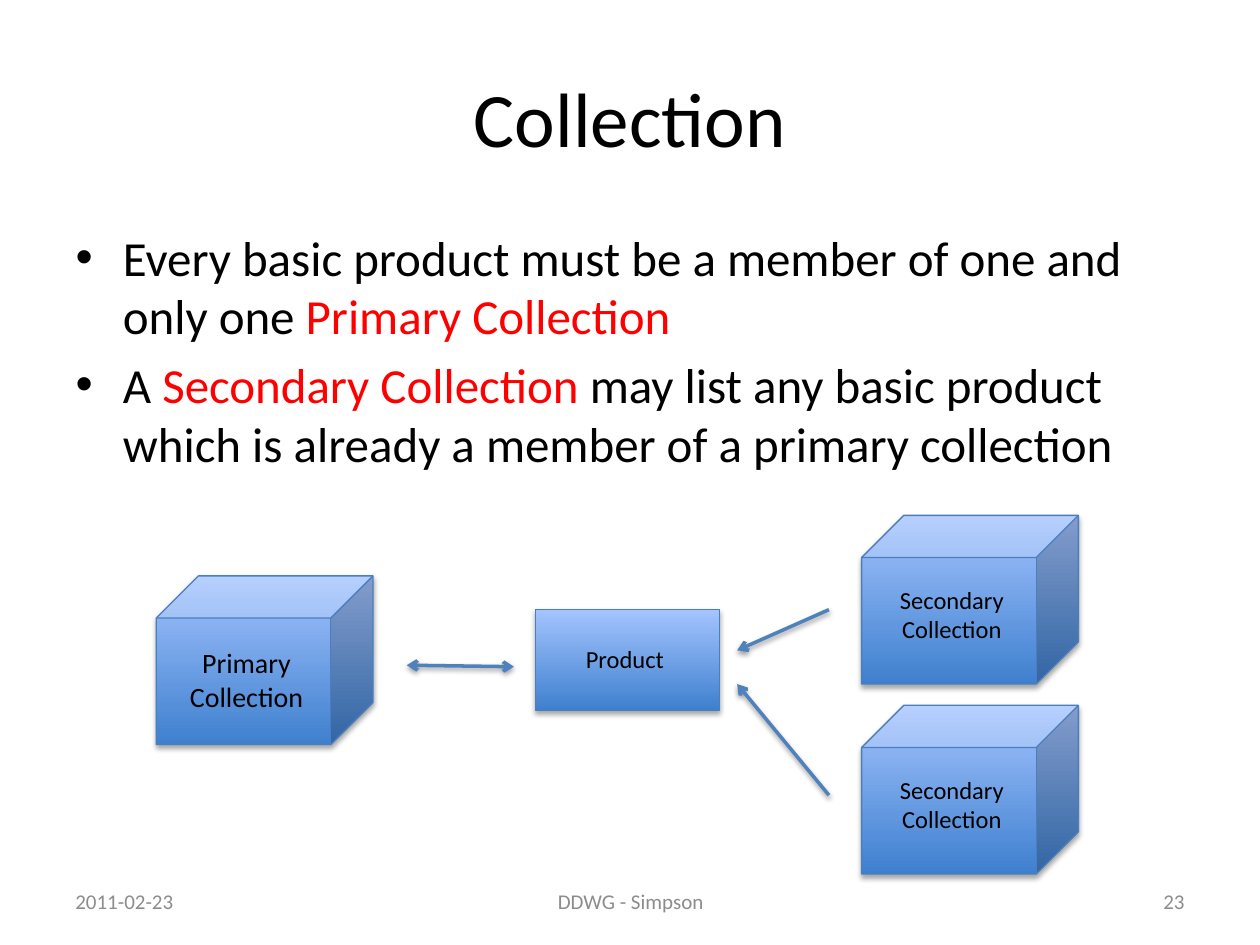
"""Build the Collection slide: two rules above a diagram of a product and its collections."""
from dataclasses import dataclass

from lxml.etree import SubElement
from pptx import Presentation
from pptx.dml.color import RGBColor
from pptx.enum.shapes import MSO_CONNECTOR, MSO_SHAPE
from pptx.enum.text import MSO_ANCHOR, PP_ALIGN
from pptx.oxml.ns import qn
from pptx.util import Cm, Pt


@dataclass(frozen=True)
class Theme:
    font: str = "Calibri"
    ink: str = "000000"
    accent: str = "FF0000"
    muted: str = "8C8C8C"
    gradient: tuple = ("3F80CE", "A4C4FF")
    outline: str = "4B7EBC"
    arrow: str = "4F81BD"
    title_size: int = 44
    body_size: int = 28
    primary_size: int = 16
    label_size: int = 14
    footer_size: int = 12


THEME = Theme()

TITLE = "Collection"
TITLE_BOX = (1.27, 0.76, 22.86, 3.18)
RULES = [
    [("Every basic product must be a member of one and only one ", THEME.ink),
     ("Primary Collection", THEME.accent)],
    [("A ", THEME.ink),
     ("Secondary Collection ", THEME.accent),
     ("may list any basic product which is already a member of a primary collection", THEME.ink)],
]
RULES_BOX = (1.27, 4.45, 22.86, 5.94)

FOOTER_TOP, FOOTER_HEIGHT = 17.65, 1.02
FOOTER = [
    ("2011-02-23", 1.27, 5.92, PP_ALIGN.LEFT),
    ("DDWG - Simpson", 8.69, 8.05, PP_ALIGN.CENTER),
    ("23", 18.21, 5.92, PP_ALIGN.RIGHT),
]

PRODUCT = "Product"
PRODUCT_BOX = (10.8, 12.29, 3.71, 2.03)
PRODUCT_LABEL_BOX = (11.56, 12.85, 2.08, 0.86)

CUBE_SIZE = (4.37, 3.4)
CUBE_LABEL = (0.41, 1.28, 2.82, 1.5)
COLLECTIONS = [
    ("Primary Collection", 3.15, 11.61, THEME.primary_size),
    ("Secondary Collection", 17.37, 10.39, THEME.label_size),
    ("Secondary Collection", 17.37, 14.22, THEME.label_size),
]

ARROWS = [
    ((8.2, 13.41), (10.36, 13.44), ("headEnd", "tailEnd")),
    ((16.71, 12.29), (14.86, 13.11), ("tailEnd",)),
    ((16.71, 16.03), (14.86, 13.79), ("tailEnd",)),
]


def lengths(values):
    return [Cm(value) for value in values]


def write_text(frame, paragraphs, *, size, align=None, anchor=None, wrap=True):
    frame.word_wrap = wrap
    if anchor is not None:
        frame.vertical_anchor = anchor
    for index, runs in enumerate(paragraphs):
        paragraph = frame.paragraphs[0] if index == 0 else frame.add_paragraph()
        paragraph.alignment = align
        for words, color in runs:
            run = paragraph.add_run()
            run.text = words
            run.font.name = THEME.font
            run.font.size = Pt(size)
            run.font.color.rgb = RGBColor.from_string(color)


def place(placeholder, box):
    placeholder.left, placeholder.top, placeholder.width, placeholder.height = lengths(box)
    return placeholder.text_frame


def add_label(slide, words, box, color=THEME.ink, **text_format):
    label = slide.shapes.add_textbox(*lengths(box))
    write_text(label.text_frame, [[(words, color)]], **text_format)


def cast_shadow(item, opacity, distance):
    effects = SubElement(item._element.spPr, qn("a:effectLst"))
    shadow = SubElement(effects, qn("a:outerShdw"), blurRad=str(Pt(3.1)),
                        dist=str(Pt(distance)), dir="5400000", rotWithShape="0")
    color = SubElement(shadow, qn("a:srgbClr"), val="000000")
    SubElement(color, qn("a:alpha"), val=str(opacity * 1000))


def add_solid(slide, kind, box):
    solid = slide.shapes.add_shape(kind, *lengths(box))
    solid.fill.gradient()
    solid.fill.gradient_angle = 90
    for stop, position, color in zip(solid.fill.gradient_stops, (0, 1), THEME.gradient):
        stop.position = position
        stop.color.rgb = RGBColor.from_string(color)
    solid.line.color.rgb = RGBColor.from_string(THEME.outline)
    solid.line.width = Pt(0.75)
    cast_shadow(solid, 35, 1.8)


def add_arrow(slide, start, end, tips):
    arrow = slide.shapes.add_connector(MSO_CONNECTOR.STRAIGHT, *lengths(start + end))
    arrow.line.color.rgb = RGBColor.from_string(THEME.arrow)
    arrow.line.width = Pt(2)
    for tip in tips:
        SubElement(arrow.line._get_or_add_ln(), qn(f"a:{tip}"), type="arrow")
    cast_shadow(arrow, 38, 1.6)


def main():
    deck = Presentation()
    deck.slide_width, deck.slide_height = lengths((25.4, 19.05))
    slide = deck.slides.add_slide(deck.slide_layouts[1])

    write_text(place(slide.shapes.title, TITLE_BOX), [[(TITLE, THEME.ink)]],
               size=THEME.title_size, align=PP_ALIGN.CENTER, anchor=MSO_ANCHOR.MIDDLE)
    write_text(place(slide.placeholders[1], RULES_BOX), RULES, size=THEME.body_size)

    for words, left, width, align in FOOTER:
        add_label(slide, words, (left, FOOTER_TOP, width, FOOTER_HEIGHT), THEME.muted,
                  size=THEME.footer_size, align=align, anchor=MSO_ANCHOR.MIDDLE)

    add_solid(slide, MSO_SHAPE.RECTANGLE, PRODUCT_BOX)
    add_label(slide, PRODUCT, PRODUCT_LABEL_BOX, size=THEME.label_size, wrap=False)

    label_left, label_top, *label_size = CUBE_LABEL
    for words, left, top, size in COLLECTIONS:
        add_solid(slide, MSO_SHAPE.CUBE, (left, top, *CUBE_SIZE))
        add_label(slide, words, (left + label_left, top + label_top, *label_size),
                  size=size, align=PP_ALIGN.CENTER)

    for start, end, tips in ARROWS:
        add_arrow(slide, start, end, tips)

    deck.save("out.pptx")


if __name__ == "__main__":
    main()
